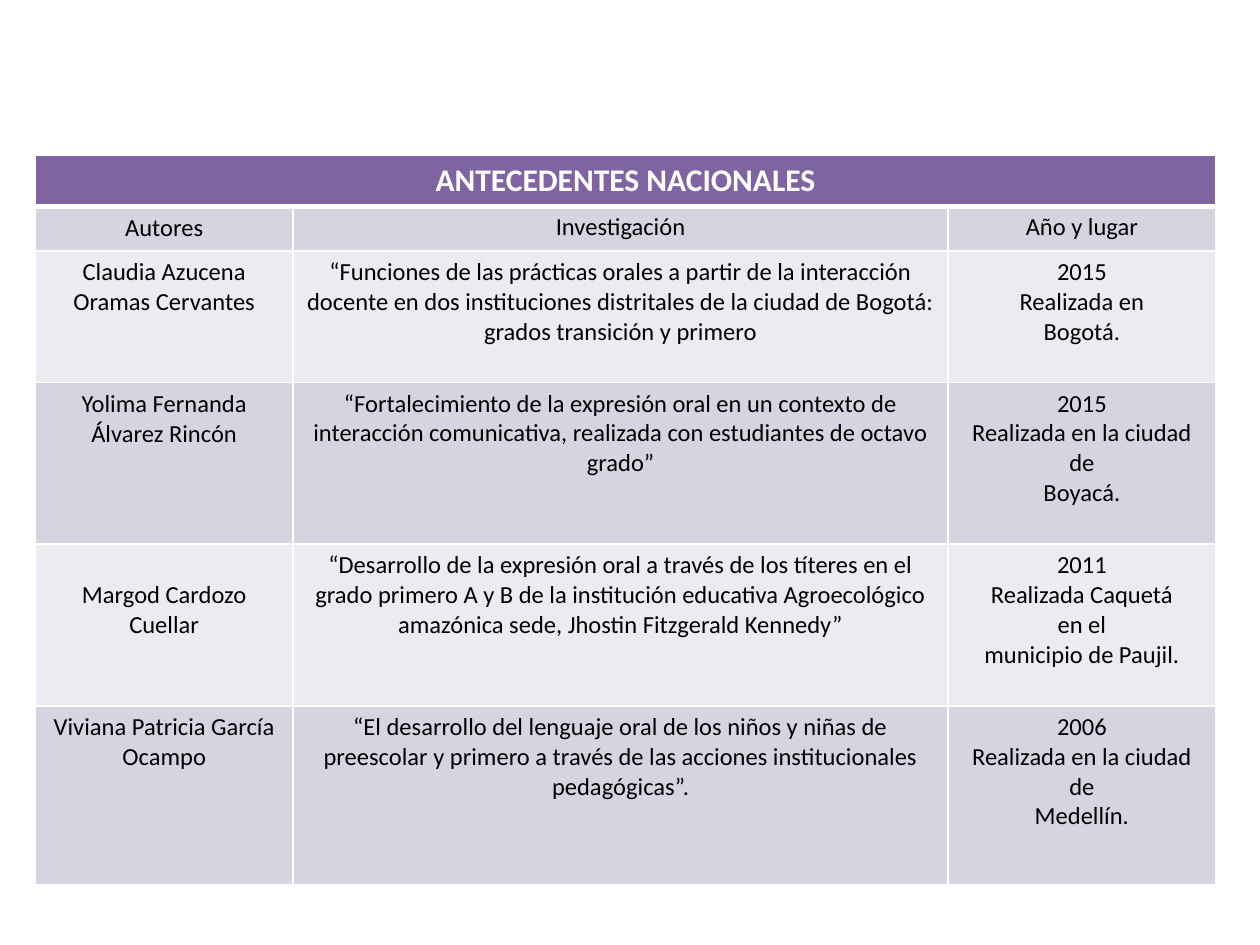
from dataclasses import dataclass

from lxml.etree import SubElement
from pptx import Presentation
from pptx.dml.color import RGBColor
from pptx.enum.text import PP_ALIGN
from pptx.oxml.ns import qn
from pptx.table import Table, _Cell
from pptx.util import Cm, Pt

WHITE = RGBColor(0xFF, 0xFF, 0xFF)
BLACK = RGBColor(0x00, 0x00, 0x00)
PURPLE = RGBColor(0x80, 0x64, 0xA2)
LILAC = RGBColor(0xD8, 0xD3, 0xE0)
PALE_LILAC = RGBColor(0xED, 0xEA, 0xF0)

HEADING_FONT = {"name": "Calibri", "size": Pt(18), "bold": True}
BODY_FONT = {"name": "Calibri", "size": Pt(14), "bold": False}
COLUMN_WIDTHS = (5.2, 13.2, 5.4)
HEADING_HEIGHT = 1.0
THIN, THICK = Pt(1), Pt(3)


@dataclass
class Study:
    authors: str
    research: str
    year_place: str
    height: float
    authors_top: float = 0.13


STUDIES = (
    Study("Autores", "Investigación", "Año y lugar", 0.9),
    Study("Claudia Azucena Oramas Cervantes",
          "“Funciones de las prácticas orales a partir de la interacción docente "
          "en dos instituciones distritales de la ciudad de Bogotá: grados "
          "transición y primero",
          "2015\nRealizada en\nBogotá.", 2.65),
    Study("Yolima Fernanda Álvarez Rincón",
          "“Fortalecimiento de la expresión oral en un contexto de interacción "
          "comunicativa, realizada con estudiantes de octavo grado”",
          "2015\nRealizada en la ciudad de\nBoyacá.", 3.26),
    Study("Margod Cardozo Cuellar",
          "“Desarrollo de la expresión oral a través de los títeres en el grado "
          "primero A y B de la institución educativa Agroecológico amazónica "
          "sede, Jhostin Fitzgerald Kennedy”",
          "2011\nRealizada Caquetá\nen el\nmunicipio de Paujil.", 3.26,
          authors_top=0.73),
    Study("Viviana Patricia García Ocampo",
          "“El desarrollo del lenguaje oral de los niños y niñas de preescolar y "
          "primero a través de las acciones institucionales pedagógicas”.",
          "2006\nRealizada en la ciudad de\nMedellín.", 3.6),
)


def style_cell(cell: _Cell, fill: RGBColor, top: int, bottom: int) -> None:
    """Give a cell white borders and a solid fill."""
    properties = cell._tc.get_or_add_tcPr()
    borders = {"a:lnL": THIN, "a:lnR": THIN, "a:lnT": top, "a:lnB": bottom}
    for tag, width in borders.items():
        line = SubElement(properties, qn(tag), w=str(int(width)))
        solid = SubElement(line, qn("a:solidFill"))
        SubElement(solid, qn("a:srgbClr"), val=str(WHITE))
    cell.fill.solid()
    cell.fill.fore_color.rgb = fill


def write_cell(cell: _Cell, text: str, font: dict, color: RGBColor) -> None:
    """Fill a cell with centred paragraphs, one for each line of text."""
    cell.text = text
    for paragraph in cell.text_frame.paragraphs:
        paragraph.alignment = PP_ALIGN.CENTER
        for run in paragraph.runs:
            for attribute, value in font.items():
                setattr(run.font, attribute, value)
            run.font.color.rgb = color


def draw_heading(table: Table) -> None:
    table.rows[0].height = Cm(HEADING_HEIGHT)
    for cell in table.rows[0].cells:
        style_cell(cell, PURPLE, THIN, THICK)
    heading = table.cell(0, 0)
    heading.merge(table.cell(0, len(COLUMN_WIDTHS) - 1))
    write_cell(heading, "ANTECEDENTES NACIONALES", HEADING_FONT, WHITE)


def draw_study(table: Table, index: int, study: Study) -> None:
    row = table.rows[index]
    row.height = Cm(study.height)
    band = LILAC if index % 2 else PALE_LILAC
    texts = (study.authors, study.research, study.year_place)
    for cell, text in zip(row.cells, texts):
        style_cell(cell, band, THICK if index == 1 else THIN, THIN)
        write_cell(cell, text, BODY_FONT, BLACK)
    row.cells[0].margin_top = Cm(study.authors_top)


def main() -> None:
    presentation = Presentation()
    presentation.slide_width, presentation.slide_height = Cm(25.4), Cm(19.05)
    # The slide has no title, so it uses the blank layout
    slide = presentation.slides.add_slide(presentation.slide_layouts[6])

    # Table of national studies
    total_height = HEADING_HEIGHT + sum(study.height for study in STUDIES)
    table = slide.shapes.add_table(
        len(STUDIES) + 1, len(COLUMN_WIDTHS), Cm(0.71), Cm(3.13),
        Cm(sum(COLUMN_WIDTHS)), Cm(total_height)).table
    table.horz_banding = False
    for column, width in zip(table.columns, COLUMN_WIDTHS):
        column.width = Cm(width)

    draw_heading(table)
    for index, study in enumerate(STUDIES, start=1):
        draw_study(table, index, study)

    presentation.save("out.pptx")


if __name__ == "__main__":
    main()
